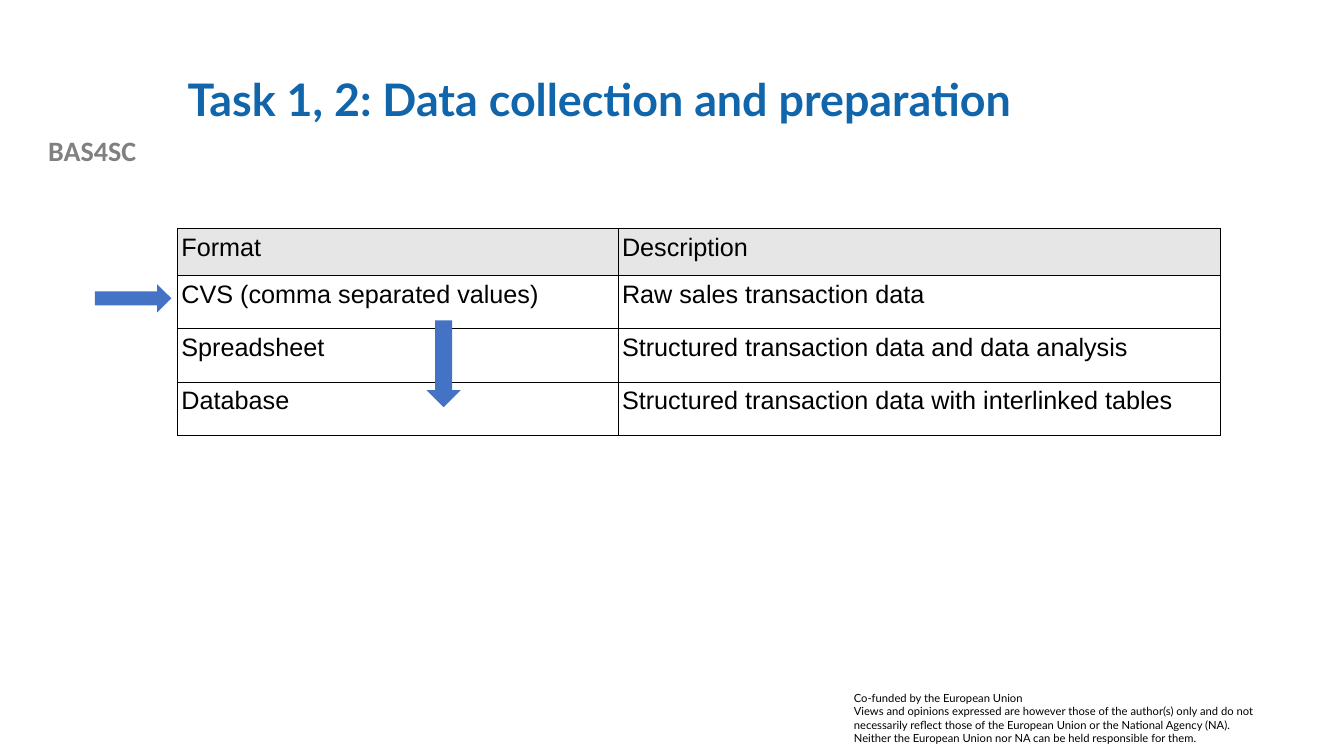
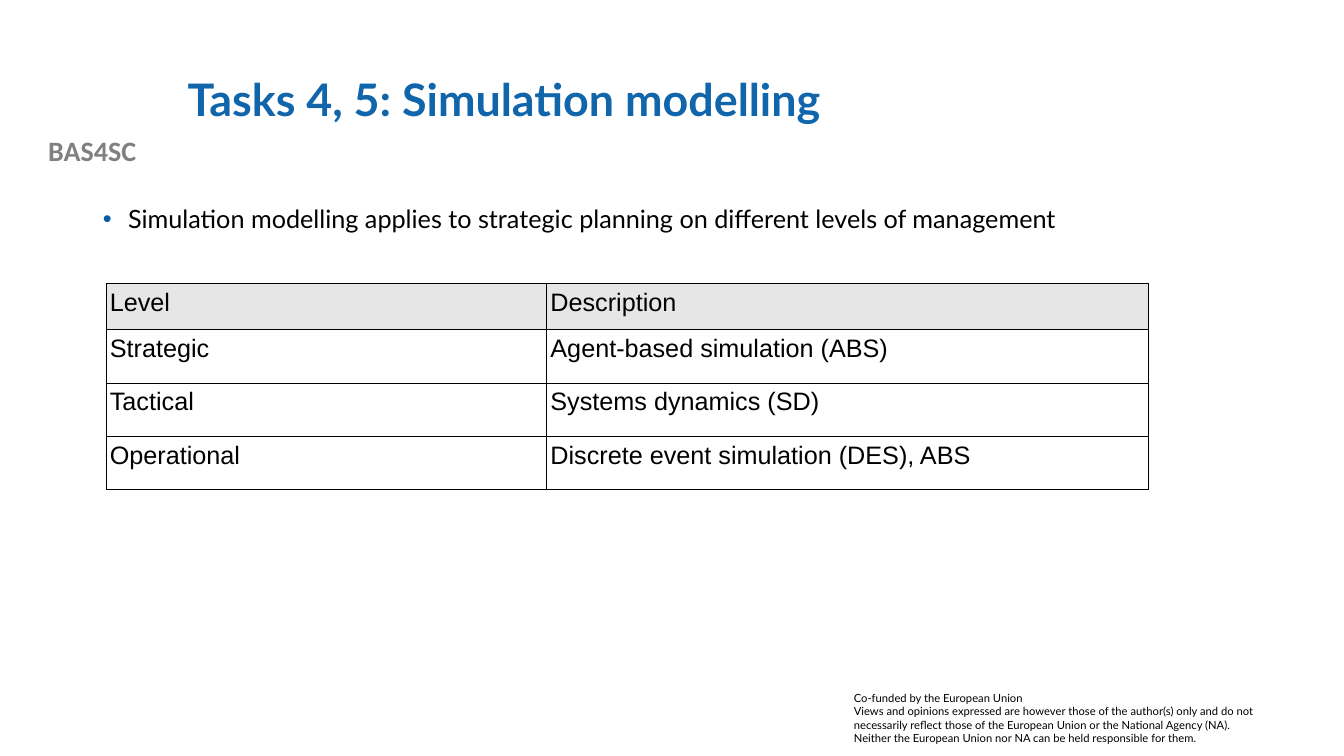
from dataclasses import dataclass
from lxml.etree import SubElement
from pptx import Presentation
from pptx.dml.color import RGBColor
from pptx.enum.shapes import MSO_SHAPE
from pptx.enum.text import MSO_ANCHOR, MSO_AUTO_SIZE, PP_ALIGN
from pptx.oxml.ns import qn
from pptx.util import Inches, Pt


@dataclass(frozen=True)
class Theme:
    title: str = "1065AB"
    label: str = "808080"
    text: str = "000000"
    bullet: str = "015BA6"
    header: str = "E7E6E6"
    arrow: str = "4472C4"
    main_font: str = "Lato"
    label_font: str = "Calibri"
    table_font: str = "Arial"
    title_size: int = 32
    label_size: int = 20
    body_size: int = 18
    footer_size: int = 8
    border_width: float = 0.57


theme = Theme()


def add_span(para, text, font, size, color, bold=False):
    span = para.add_run()
    span.text = text
    span.font.name = font
    span.font.size = Pt(size)
    span.font.bold = bold
    span.font.color.rgb = RGBColor.from_string(color)


def add_borders(cell):
    properties = cell._tc.get_or_add_tcPr()
    for side in ("a:lnL", "a:lnR", "a:lnT", "a:lnB"):
        line = SubElement(properties, qn(side), w=str(Pt(theme.border_width)))
        fill = SubElement(line, qn("a:solidFill"))
        SubElement(fill, qn("a:srgbClr"), val=theme.text)


footer_lines = [
    "Co-funded by the European Union",
    "Views and opinions expressed are however those of the author(s) only and do not "
    "necessarily reflect those of the European Union or the National Agency (NA).",
    "Neither the European Union nor NA can be held responsible for them.",
]
column_widths = [4.37, 5.97]
row_heights = [0.46, 0.53, 0.53, 0.53]
slides = [
    {
        "title": "Task 1, 2: Data collection and preparation",
        "bullet": None,
        "table_at": (1.76, 2.27),
        "rows": [
            ("Format", "Description"),
            ("CVS (comma separated values)", "Raw sales transaction data"),
            ("Spreadsheet", "Structured transaction data and data analysis"),
            ("Database", "Structured transaction data with interlinked tables"),
        ],
        "arrows": [
            (MSO_SHAPE.RIGHT_ARROW, 0.94, 2.82, 0.76, 0.28),
            (MSO_SHAPE.DOWN_ARROW, 4.23, 3.18, 0.34, 0.86),
        ],
    },
    {
        "title": "Tasks 4, 5: Simulation modelling",
        "bullet": "Simulation modelling applies to strategic planning on different levels of management",
        "table_at": (1.05, 2.81),
        "rows": [
            ("Level", "Description"),
            ("Strategic", "Agent-based simulation (ABS)"),
            ("Tactical", "Systems dynamics (SD)"),
            ("Operational", "Discrete event simulation (DES), ABS"),
        ],
        "arrows": [],
    },
]

deck = Presentation()
deck.slide_width = Inches(13.33)
deck.slide_height = Inches(7.5)
title_and_content, title_only = deck.slide_layouts[1], deck.slide_layouts[5]

for content in slides:
    page = deck.slides.add_slide(title_and_content if content["bullet"] else title_only)

    label = page.shapes.add_textbox(Inches(0), Inches(1.28), Inches(1.83), Inches(0.43))
    label.text_frame.word_wrap = True
    para = label.text_frame.paragraphs[0]
    para.alignment = PP_ALIGN.CENTER
    add_span(para, "BAS4SC", theme.label_font, theme.label_size, theme.label, True)

    footer = page.shapes.add_textbox(Inches(8.37), Inches(6.81), Inches(4.42), Inches(0.64))
    footer.text_frame.word_wrap = True
    for index, text in enumerate(footer_lines):
        frame = footer.text_frame
        para = frame.add_paragraph() if index else frame.paragraphs[0]
        add_span(para, text, theme.main_font, theme.footer_size, theme.text)

    title = page.shapes.title
    title.left, title.top = Inches(1.76), Inches(0.4)
    title.width, title.height = Inches(10.66), Inches(1.22)
    title.text_frame.auto_size = MSO_AUTO_SIZE.NONE
    title.text_frame.vertical_anchor = MSO_ANCHOR.MIDDLE
    para = title.text_frame.paragraphs[0]
    para.alignment = PP_ALIGN.LEFT
    para.line_spacing = 0.9
    add_span(para, content["title"], theme.main_font, theme.title_size, theme.title, True)

    if content["bullet"]:
        body = page.placeholders[1]
        body.left, body.top = Inches(0.92), Inches(2)
        body.width, body.height = Inches(11.5), Inches(4.76)
        body.text_frame.auto_size = MSO_AUTO_SIZE.NONE
        para = body.text_frame.paragraphs[0]
        para.line_spacing = 0.9
        para.space_before = Pt(0)
        properties = para._p.get_or_add_pPr()
        properties.set("marL", str(Inches(0.25)))
        properties.set("indent", str(-Inches(0.25)))
        bullet_color = SubElement(properties, qn("a:buClr"))
        SubElement(bullet_color, qn("a:srgbClr"), val=theme.bullet)
        SubElement(properties, qn("a:buFont"), typeface=theme.table_font)
        SubElement(properties, qn("a:buChar"), char="•")
        add_span(para, content["bullet"], theme.main_font, theme.body_size, theme.text)

    left, top = content["table_at"]
    table = page.shapes.add_table(
        len(row_heights), len(column_widths), Inches(left), Inches(top),
        Inches(sum(column_widths)), Inches(sum(row_heights)),
    ).table
    table.first_row = True
    table.horz_banding = False
    for column, width in zip(table.columns, column_widths):
        column.width = Inches(width)
    for row_index, (row, height) in enumerate(zip(table.rows, row_heights)):
        row.height = Inches(height)
        for cell, text in zip(row.cells, content["rows"][row_index]):
            cell.margin_left = cell.margin_right = Inches(0.04)
            cell.margin_top = cell.margin_bottom = Inches(0.05)
            add_borders(cell)
            if row_index == 0:
                cell.fill.solid()
                cell.fill.fore_color.rgb = RGBColor.from_string(theme.header)
            else:
                cell.fill.background()
            para = cell.text_frame.paragraphs[0]
            add_span(para, text, theme.table_font, theme.body_size, theme.text)

    for kind, *bounds in content["arrows"]:
        arrow = page.shapes.add_shape(kind, *map(Inches, bounds))
        arrow.shadow.inherit = False
        arrow.fill.solid()
        arrow.fill.fore_color.rgb = RGBColor.from_string(theme.arrow)
        arrow.line.fill.background()

deck.save("out.pptx")
